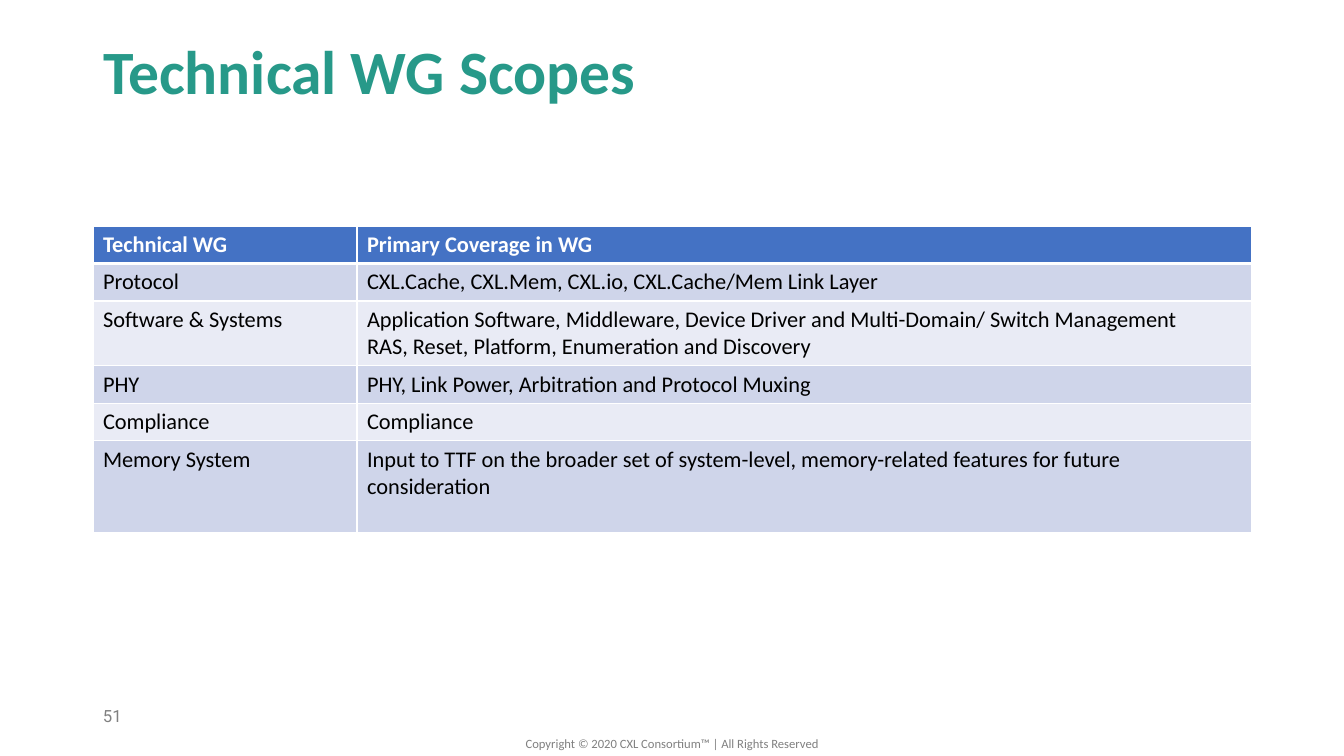
"""Build the slide that lists the scopes of the technical work groups."""
from dataclasses import dataclass

from lxml.etree import SubElement
from pptx import Presentation
from pptx.dml.color import RGBColor
from pptx.enum.text import MSO_ANCHOR, MSO_AUTO_SIZE, PP_ALIGN
from pptx.oxml.ns import qn
from pptx.util import Emu, Pt

WIDE, HIGH = 1344, 756
SCALE = 12192000 / WIDE
COLORS = {
    "title": "279989", "head": "4472C4", "odd": "CFD5EA", "even": "E9EBF5",
    "white": "FFFFFF", "black": "000000", "gray": "808080",
}
FORMS = {
    "title": {"name": "Calibri", "size": Pt(44), "bold": True},
    "head": {"name": "Calibri", "size": Pt(16), "bold": True},
    "cell": {"name": "Calibri", "size": Pt(16), "bold": False},
    "legal": {"name": "Calibri", "size": Pt(9)},
    "number": {"name": "Roboto", "size": Pt(12)},
}
COLS = (264, 895)


@dataclass(frozen=True)
class Row:
    """One table row: group, coverage and least height."""
    group: str
    scope: str
    high: int = 33


@dataclass(frozen=True)
class Label:
    """One line of text at the foot of the slide."""
    text: str
    box: tuple[int, int, int, int]
    form: str
    align: PP_ALIGN


ROWS = (
    Row("Technical WG", "Primary Coverage in WG"),
    Row("Protocol", "CXL.Cache, CXL.Mem, CXL.io, CXL.Cache/Mem Link Layer"),
    Row("Software & Systems",
        "Application Software, Middleware, Device Driver and Multi-Domain/ "
        "Switch Management\nRAS, Reset, Platform, Enumeration and Discovery"),
    Row("PHY", "PHY, Link Power, Arbitration and Protocol Muxing"),
    Row("Compliance", "Compliance"),
    Row("Memory System",
        "Input to TTF on the broader set of system-level, memory-related "
        "features for future consideration", 92),
)
LABELS = (
    Label("Copyright © 2020 CXL Consortium™ | All Rights Reserved",
          (354, 731, 636, 25), "legal", PP_ALIGN.CENTER),
    Label("51", (93, 701, 302, 40), "number", PP_ALIGN.LEFT),
)


def px(count: int) -> Emu:
    """Turn px into EMU."""
    return Emu(round(count * SCALE))


def write(frame, text: str, form: str, color: str, align=PP_ALIGN.LEFT) -> None:
    """Fill a text frame and format each of its paragraphs."""
    frame.text = text
    for para in frame.paragraphs:
        para.alignment = align
        for run in para.runs:
            for key, value in FORMS[form].items():
                setattr(run.font, key, value)
            run.font.color.rgb = RGBColor.from_string(COLORS[color])


def edge(cell, side: str, width: int) -> None:
    """Draw one white border of a cell."""
    line = SubElement(cell._tc.get_or_add_tcPr(), qn(f"a:ln{side}"), w=str(Pt(width)))
    fill = SubElement(line, qn("a:solidFill"))
    SubElement(fill, qn("a:srgbClr"), val=COLORS["white"])


def draw_title(slide) -> None:
    """Place and format the title."""
    title = slide.shapes.title
    place = {"left": 93, "top": 35, "width": 1159, "height": 79}
    for key, value in place.items():
        setattr(title, key, px(value))
    frame = title.text_frame
    frame.auto_size = MSO_AUTO_SIZE.NONE
    frame.vertical_anchor = MSO_ANCHOR.MIDDLE
    write(frame, "Technical WG Scopes", "title", "title")
    frame.paragraphs[0].line_spacing = 0.9


def draw_table(slide) -> None:
    """Draw the table of groups and their coverage."""
    high = sum(row.high for row in ROWS)
    box = map(px, (93, 226, sum(COLS), high))
    table = slide.shapes.add_table(len(ROWS), len(COLS), *box).table
    for col, width in zip(table.columns, COLS):
        col.width = px(width)
    for place, row in enumerate(ROWS):
        table.rows[place].height = px(row.high)
        head = place == 0
        fill = "head" if head else "odd" if place % 2 else "even"
        for cell, text in zip(table.rows[place].cells, (row.group, row.scope)):
            for side in "LRTB":
                thick = (head and side == "B") or (place == 1 and side == "T")
                edge(cell, side, 3 if thick else 1)
            cell.fill.solid()
            cell.fill.fore_color.rgb = RGBColor.from_string(COLORS[fill])
            write(cell.text_frame, text, "head" if head else "cell",
                  "white" if head else "black")


def draw_label(slide, label: Label) -> None:
    """Add one foot label."""
    frame = slide.shapes.add_textbox(*map(px, label.box)).text_frame
    frame.word_wrap = True
    write(frame, label.text, label.form, "gray", label.align)


def main() -> None:
    """Build and save the slide."""
    deck = Presentation()
    deck.slide_width, deck.slide_height = px(WIDE), px(HIGH)
    slide = deck.slides.add_slide(deck.slide_layouts[5])
    draw_title(slide)
    draw_table(slide)
    for label in LABELS:
        draw_label(slide, label)
    deck.save("out.pptx")


if __name__ == "__main__":
    main()
